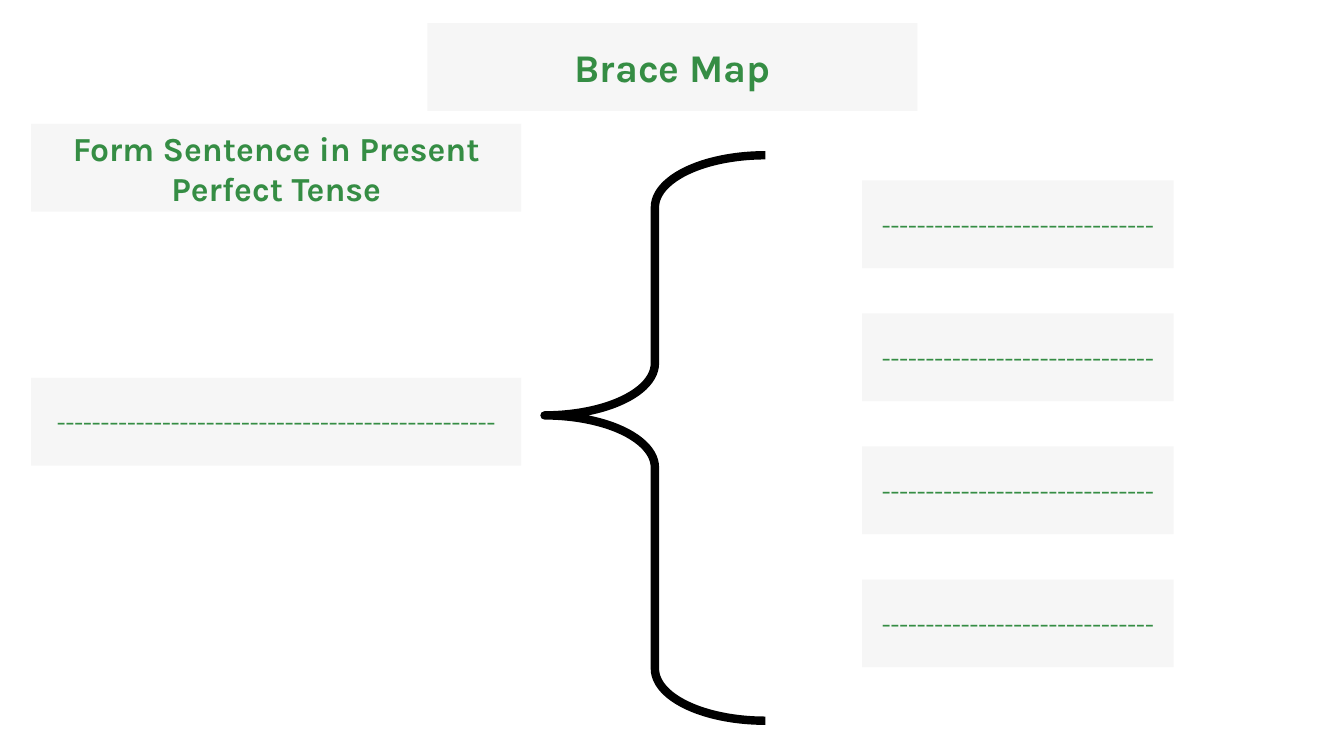
from pptx import Presentation
from pptx.dml.color import RGBColor
from pptx.enum.shapes import MSO_SHAPE as SHAPE
from pptx.enum.text import MSO_ANCHOR as ANCHOR, PP_ALIGN as ALIGN
from pptx.util import Pt

PX = 9144  # EMU per px, 100 px to the inch
COLORS = {"panel": "F6F6F6", "text": "358D44", "brace": "000000"}


class BraceMap:
    font = "Karla"
    box_height = 87

    def __init__(self, prs):
        self.slide = prs.slides.add_slide(prs.slide_layouts[6])

    def color(self, name):
        return RGBColor.from_string(COLORS[name])

    def shape(self, kind, x, y, w, h):
        sp = self.slide.shapes.add_shape(kind, x * PX, y * PX, w * PX, h * PX)
        sp.shadow.inherit = False
        return sp

    def box(self, x, y, w, text, size=18, bold=False):
        sp = self.shape(SHAPE.RECTANGLE, x, y, w, self.box_height)
        sp.fill.solid()
        sp.fill.fore_color.rgb = self.color("panel")
        sp.line.fill.background()
        tf = sp.text_frame
        tf.word_wrap = True
        tf.vertical_anchor = ANCHOR.MIDDLE
        p = tf.paragraphs[0]
        p.text = text
        p.alignment = ALIGN.CENTER
        p.font.name = self.font
        p.font.size = Pt(size)
        p.font.bold = bold
        p.font.color.rgb = self.color("text")

    def brace(self, x, y, w, h, curve, tip):
        """Draw a brace that opens to the right, its tip measured from the bottom."""
        sp = self.shape(SHAPE.RIGHT_BRACE, x, y, w, h)
        sp.rotation = 180
        sp.adjustments[0] = curve
        sp.adjustments[1] = tip
        sp.fill.background()
        sp.line.color.rgb = self.color("brace")
        sp.line.width = Pt(6)


def main():
    prs = Presentation()
    prs.slide_width, prs.slide_height = 1333 * PX, 750 * PX
    brace_map = BraceMap(prs)

    brace_map.box(31, 375, 486, "-" * 50)
    brace_map.box(424, 23, 486, "Brace Map", size=28, bold=True)
    brace_map.brace(540, 154, 219, 561, curve=0.236, tip=0.54)
    for i in range(4):
        brace_map.box(855, 179 + 132 * i, 309, "-" * 31)
    brace_map.box(31, 123, 486, "Form Sentence in Present Perfect Tense", size=24, bold=True)

    prs.save("out.pptx")


if __name__ == "__main__":
    main()
